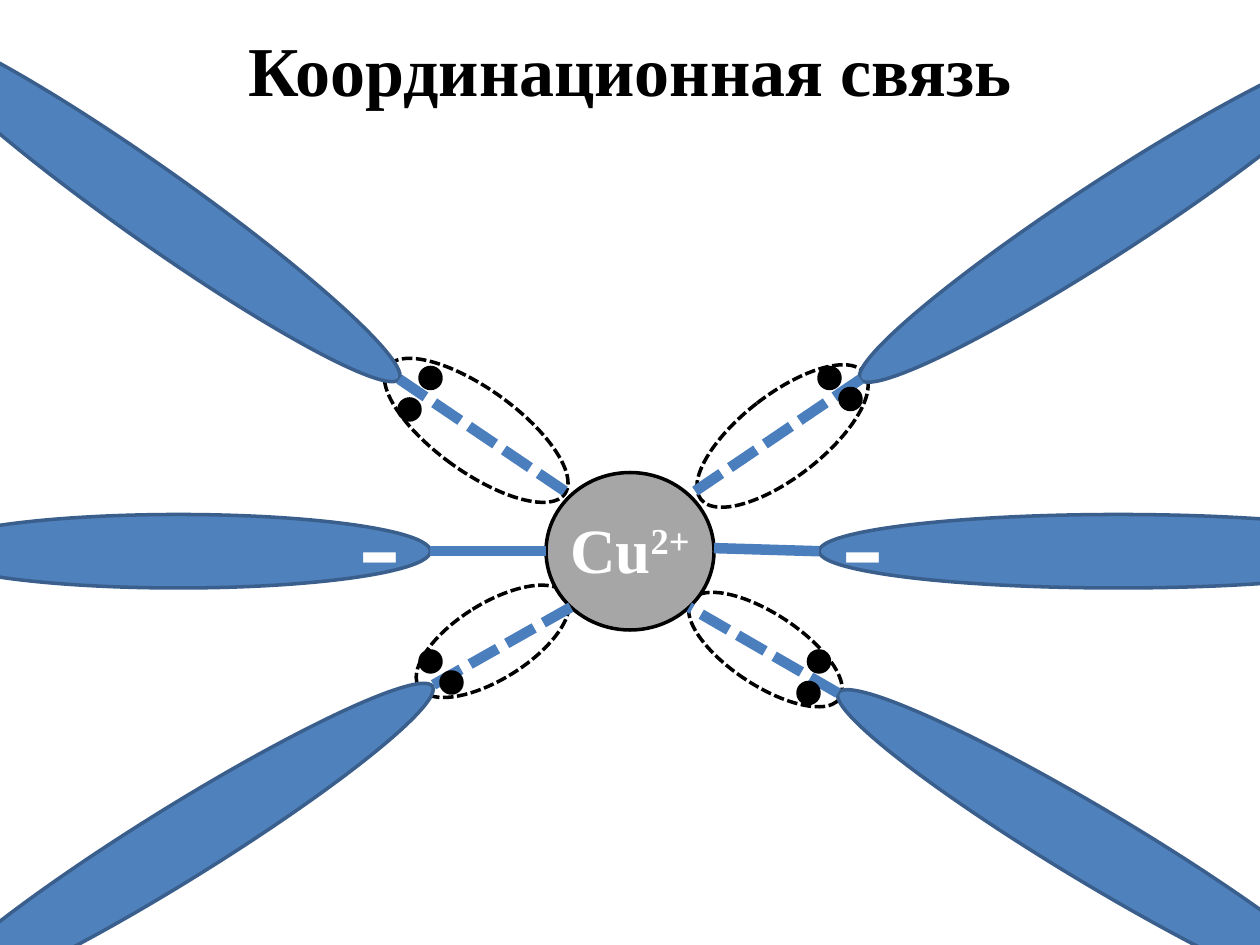
from lxml.etree import SubElement
from pptx import Presentation
from pptx.dml.color import RGBColor
from pptx.enum.dml import MSO_LINE
from pptx.enum.shapes import MSO_CONNECTOR, MSO_SHAPE
from pptx.enum.text import MSO_ANCHOR, MSO_AUTO_SIZE, PP_ALIGN
from pptx.oxml.ns import qn
from pptx.util import Pt

COLORS = {
    "black": "000000",
    "white": "FFFFFF",
    "ion": "A6A6A6",
    "ligand": "4F81BD",
    "ligand_edge": "3A5F8C",
    "bond": "4B7EBC",
}
SERIF = "Times New Roman"
SLIDE_BOX = (0, 0, 720, 540)
TITLE_HEIGHT = 78
ELECTRON_SIZE = 12

# Ellipses: left, top, width, height, rotation
ORBITALS = [
    (423.4, 190.1, 47.5, 118.1, 52.3),
    (259.9, 316.8, 43.2, 99.4, 58),
    (416.9, 320.4, 41, 101.5, 303.3),
    (248.4, 183.6, 47.5, 124.6, 305.7),
]
LIGANDS = [
    (-42, 294, 288, 42, 0),
    (468, 294, 342, 42, 0),
    (-85.7, 95.8, 345.6, 42, 35.3),
    (463.7, 102.2, 342.7, 42, 326.9),
    (-69.8, 461.5, 342.7, 42, 328.2),
    (454.3, 464.4, 348.5, 42, 30.9),
]
# Bonds: start x, start y, end x, end y
SOLID_BONDS = [(246, 315, 312, 315), (468, 315, 408, 313.2)]
DASHED_BONDS = [
    (491.8, 216.7, 393.8, 283),
    (228.2, 216.7, 326.2, 283),
    (326.2, 347, 247, 391.7),
    (478.8, 396, 393.8, 347),
]
# Electrons: left, top
ELECTRONS = [
    (240, 210), (228, 228), (480, 222), (468, 210),
    (240, 372), (252, 384), (462, 372), (456, 390),
]


def color(name):
    return RGBColor.from_string(COLORS[name])


def add_ellipse(slide, box, fill, edge="black", rotation=0, dash=None):
    shape = slide.shapes.add_shape(MSO_SHAPE.OVAL, *map(Pt, box))
    shape.shadow.inherit = False
    shape.rotation = rotation
    shape.fill.solid()
    shape.fill.fore_color.rgb = color(fill)
    shape.line.color.rgb = color(edge)
    shape.line.width = Pt(2)
    if dash:
        shape.line.dash_style = dash


def add_bond(slide, ends, dash=None):
    bond = slide.shapes.add_connector(MSO_CONNECTOR.STRAIGHT, *map(Pt, ends))
    bond.line.color.rgb = color("bond")
    bond.line.width = Pt(6)
    if dash:
        bond.line.dash_style = dash
    SubElement(bond._element.spPr, qn("a:effectLst"))


def add_label(slide, box, text, size, font_name, bold=False,
              align=PP_ALIGN.LEFT, superscript=""):
    frame = slide.shapes.add_textbox(*map(Pt, box)).text_frame
    frame.word_wrap = True
    frame.auto_size = MSO_AUTO_SIZE.SHAPE_TO_FIT_TEXT
    paragraph = frame.paragraphs[0]
    paragraph.alignment = align
    paragraph.font.name = font_name
    paragraph.font.size = Pt(size)
    paragraph.font.bold = bold
    paragraph.font.color.rgb = color("white")
    paragraph.add_run().text = text
    if superscript:
        run = paragraph.add_run()
        run.text = superscript
        run.font._element.set("baseline", "30000")


def add_title(slide, box):
    title = slide.shapes.title
    title.left, title.top, title.width, title.height = map(Pt, box)
    frame = title.text_frame
    frame.text = "Координационная связь"
    frame.vertical_anchor = MSO_ANCHOR.MIDDLE
    paragraph = frame.paragraphs[0]
    paragraph.alignment = PP_ALIGN.CENTER
    paragraph.font.name = SERIF
    paragraph.font.size = Pt(40)
    paragraph.font.bold = True
    paragraph.font.color.rgb = color("black")


def add_ion(slide, box):
    left, top, width, height = box
    add_ellipse(slide, box, "ion")
    add_label(slide, (left, top + 18, width, 51), "Cu", 36, SERIF, bold=True,
              align=PP_ALIGN.CENTER, superscript="2+")


def add_complex(slide, box):
    left, top = box[:2]

    def place(x, y, *rest):
        return (left + x, top + y, *rest)

    # Orbitals behind the central ion
    for x, y, width, height, rotation in ORBITALS:
        add_ellipse(slide, place(x, y, width, height), "white",
                    rotation=rotation, dash=MSO_LINE.SQUARE_DOT)
    add_ion(slide, place(312, 270, 96, 90))

    # Ligands
    for x, y, width, height, rotation in LIGANDS:
        add_ellipse(slide, place(x, y, width, height), "ligand",
                    "ligand_edge", rotation)

    # Bonds
    for bonds, dash in ((SOLID_BONDS, None),
                        (DASHED_BONDS, MSO_LINE.SQUARE_DOT)):
        for start_x, start_y, end_x, end_y in bonds:
            add_bond(slide, place(start_x, start_y) + place(end_x, end_y), dash)

    # Negative charges
    for x in (198, 474):
        add_label(slide, place(x, 258, 42, 104.2), "-", 80, "Calibri")

    # Electron pairs
    for x, y in ELECTRONS:
        add_ellipse(slide, place(x, y, ELECTRON_SIZE, ELECTRON_SIZE), "black")


def main():
    presentation = Presentation()
    left, top, width, height = SLIDE_BOX
    presentation.slide_width = Pt(width)
    presentation.slide_height = Pt(height)
    slide = presentation.slides.add_slide(presentation.slide_layouts[5])
    add_title(slide, (left, top, width, TITLE_HEIGHT))
    add_complex(slide, SLIDE_BOX)
    presentation.save("out.pptx")


if __name__ == "__main__":
    main()
